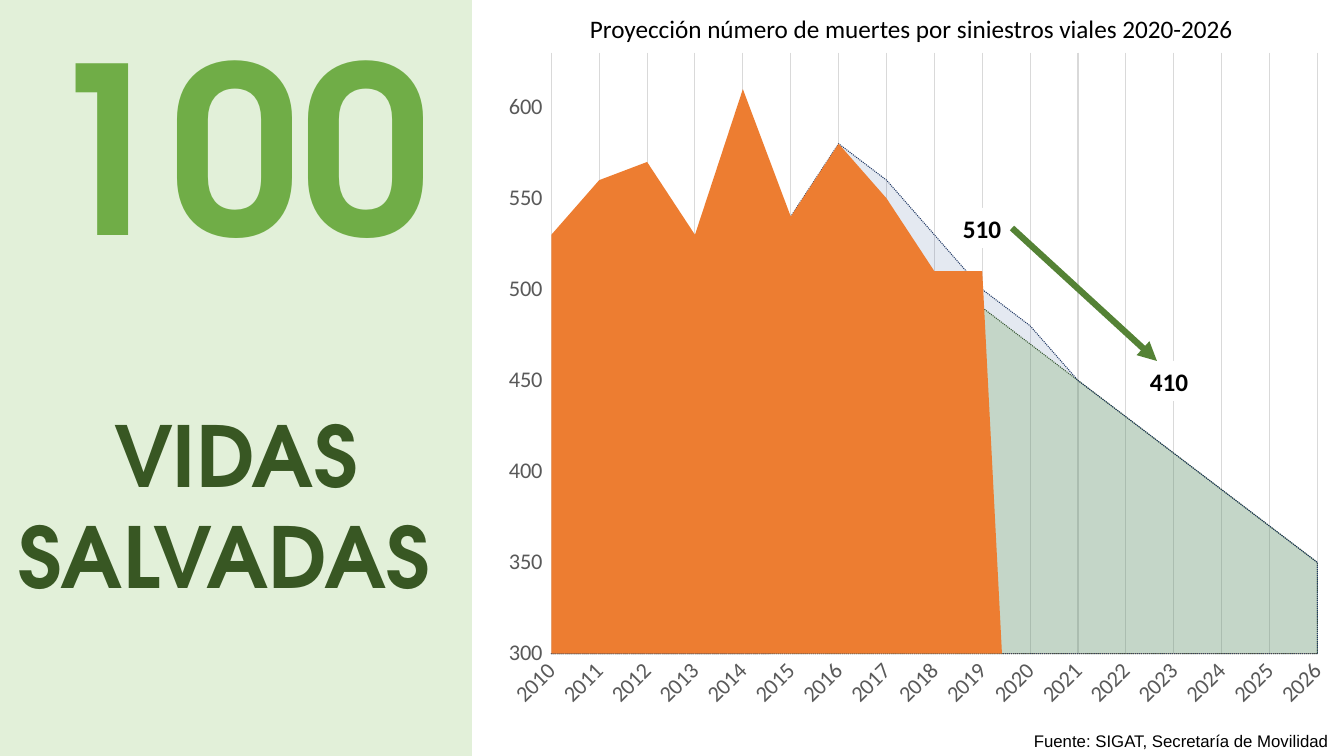
import pptx
import pptx.chart.data
import pptx.dml.color
import pptx.enum.chart
import pptx.enum.dml
import pptx.enum.shapes
import pptx.enum.text
import pptx.oxml
import pptx.oxml.ns
import pptx.util
from lxml import etree

EMU_PER_PX = 914400 / 100.8
HEADING_FONT = "TeX Gyre Adventor"
BODY_FONT = "Calibri"
YEARS = [str(year) for year in range(2010, 2027)]
# name, first year, values, fill, opacity in percent, line
SERIES = [
    ("Series 1", 2010, [530, 560, 570, 530, 610, 540, 580, 550, 510, 510],
     "ED7D31", 100, None),
    ("Series 2", 2015, [540, 580, 560, 530, 500, 480, 450, 430, 410, 390, 370, 350],
     "2F5597", 13, "203864"),
    ("Series 3", 2015, [540, 530, 520, 500, 490, 470, 450, 430, 410, 390, 370, 350],
     "70AD47", 25, "385723"),
]
PLOT_AREA = {"x": 0.075, "y": 0.02, "w": 0.893, "h": 0.876}


def px(n):
    return pptx.util.Emu(round(n * EMU_PER_PX))


def rgb(color):
    return pptx.dml.color.RGBColor.from_string(color)


def set_fill(fill, color, opacity=100):
    fill.solid()
    fill.fore_color.rgb = rgb(color)
    if opacity < 100:
        clr = fill._xPr.find(".//" + pptx.oxml.ns.qn("a:srgbClr"))
        etree.SubElement(clr, pptx.oxml.ns.qn("a:alpha"), val=str(opacity * 1000))


def set_line(line, color, width):
    set_fill(line.fill, color)
    line.width = pptx.util.Pt(width)


def set_font(font, name, size, color, bold=False):
    font.name = name
    font.size = pptx.util.Pt(size)
    font.bold = bold
    font.color.rgb = rgb(color)


def add_run(p, text, name, size, color, bold=False):
    r = p.add_run()
    r.text = text
    set_font(r.font, name, size, color, bold)


def add_text(s, box, text, font, size, wrap=False):
    tf = s.shapes.add_textbox(*map(px, box)).text_frame
    tf.word_wrap = wrap
    add_run(tf.paragraphs[0], text, font, size, "000000")


def add_box(s, box, fill):
    sp = s.shapes.add_shape(pptx.enum.shapes.MSO_SHAPE.RECTANGLE, *map(px, box))
    sp.shadow.inherit = False
    set_fill(sp.fill, fill)
    sp.line.fill.background()
    return sp


def add_sidebar(s):
    tf = add_box(s, (0, 0, 472, 756), "E2F0D9").text_frame
    tf.word_wrap = True
    tf.vertical_anchor = pptx.enum.text.MSO_ANCHOR.TOP
    tf.margin_top = px(3)
    number, caption = tf.paragraphs[0], tf.add_paragraph()
    for p in (number, caption):
        p.alignment = pptx.enum.text.PP_ALIGN.CENTER
    caption.space_before = pptx.util.Pt(87)
    add_run(number, "100", HEADING_FONT, 166, "70AD47", True)
    add_run(caption, "VIDAS SALVADAS ", HEADING_FONT, 60, "385723", True)


def add_value_label(s, x, y, text):
    sp = add_box(s, (x, y, 59, 40), "FFFFFF")
    tf = sp.text_frame
    tf.word_wrap = False
    tf.paragraphs[0].alignment = pptx.enum.text.PP_ALIGN.LEFT
    add_run(tf.paragraphs[0], text, BODY_FONT, 18, "000000", True)
    return sp


def add_arrow(s, source, x, y):
    """Arrow from the right side of source to the point (x, y)."""
    line = s.shapes.add_connector(
        pptx.enum.shapes.MSO_CONNECTOR.STRAIGHT, 0, 0, px(x), px(y))
    line.begin_connect(source, 3)
    set_line(line.line, "548235", 4.5)
    ln = line.line._get_or_add_ln()
    etree.SubElement(ln, pptx.oxml.ns.qn("a:tailEnd"), type="triangle")
    etree.SubElement(line._element.spPr, pptx.oxml.ns.qn("a:effectLst"))


def style_axes(chart):
    cat, val = chart.category_axis, chart.value_axis
    for axis in (cat, val):
        axis.major_tick_mark = pptx.enum.chart.XL_TICK_MARK.NONE
        axis.minor_tick_mark = pptx.enum.chart.XL_TICK_MARK.NONE
        set_font(axis.tick_labels.font, BODY_FONT, 16, "595959")
        set_line(axis.format.line, "D9D9D9", 0.75)
    cat.has_major_gridlines = True
    set_line(cat.major_gridlines.format.line, "D9D9D9", 0.75)
    body = cat._element.find(".//" + pptx.oxml.ns.qn("a:bodyPr"))
    body.set("rot", "-2700000")
    body.set("vert", "horz")
    val.has_major_gridlines = False
    val.minimum_scale, val.maximum_scale, val.major_unit = 300, 630, 50
    val.tick_labels.number_format = '_(* #,##0_);_(* \\(#,##0\\);_(* "-"_);_(@_)'
    val.tick_labels.number_format_is_linked = False


def set_plot_area(chart):
    """Fix the inner plot area as fractions of the chart and plot gaps as zero."""
    qn = pptx.oxml.ns.qn
    space = chart._chartSpace
    plot = space.find(".//" + qn("c:plotArea"))
    layout = plot.find(qn("c:layout"))
    if layout is None:
        layout = etree.Element(qn("c:layout"))
        plot.insert(0, layout)
    manual = etree.SubElement(layout, qn("c:manualLayout"))
    settings = [("layoutTarget", "inner"), ("xMode", "edge"), ("yMode", "edge")]
    for tag, value in settings + list(PLOT_AREA.items()):
        etree.SubElement(manual, qn("c:" + tag), val=str(value))
    space.find(".//" + qn("c:dispBlanksAs")).set("val", "zero")


def add_deaths_chart(s):
    data = pptx.chart.data.CategoryChartData()
    data.categories = YEARS
    for name, first, values, *_ in SERIES:
        before = [None] * (first - int(YEARS[0]))
        after = [None] * (len(YEARS) - len(before) - len(values))
        data.add_series(name, before + values + after)
    chart = s.shapes.add_chart(pptx.enum.chart.XL_CHART_TYPE.AREA,
                               *map(px, (487, 39, 858, 686)), data).chart
    chart.has_legend = False
    chart.has_title = False
    set_font(chart.font, BODY_FONT, 10, "000000")
    chart.plots[0].vary_by_categories = False
    for series, (*_, fill, opacity, line) in zip(chart.plots[0].series, SERIES):
        set_fill(series.format.fill, fill, opacity)
        if line:
            set_line(series.format.line, line, 0.75)
            series.format.line.dash_style = pptx.enum.dml.MSO_LINE.ROUND_DOT
        else:
            series.format.line.fill.background()
    style_axes(chart)
    set_plot_area(chart)


def main():
    prs = pptx.Presentation()
    prs.slide_width, prs.slide_height = px(1344), px(756)
    s = prs.slides.add_slide(prs.slide_layouts[6])
    add_text(s, (1024, 726, 329, 30), "Fuente: SIGAT, Secretaría de Movilidad",
             "Arial", 12, wrap=True)
    add_deaths_chart(s)
    add_sidebar(s)
    current = add_value_label(s, 953, 208, "510")
    add_value_label(s, 1140, 361, "410")
    add_arrow(s, current, 1157, 361)
    add_text(s, (580, 8, 670, 40),
             "Proyección número de muertes por siniestros viales 2020-2026",
             BODY_FONT, 18)
    prs.save("out.pptx")


if __name__ == "__main__":
    main()
